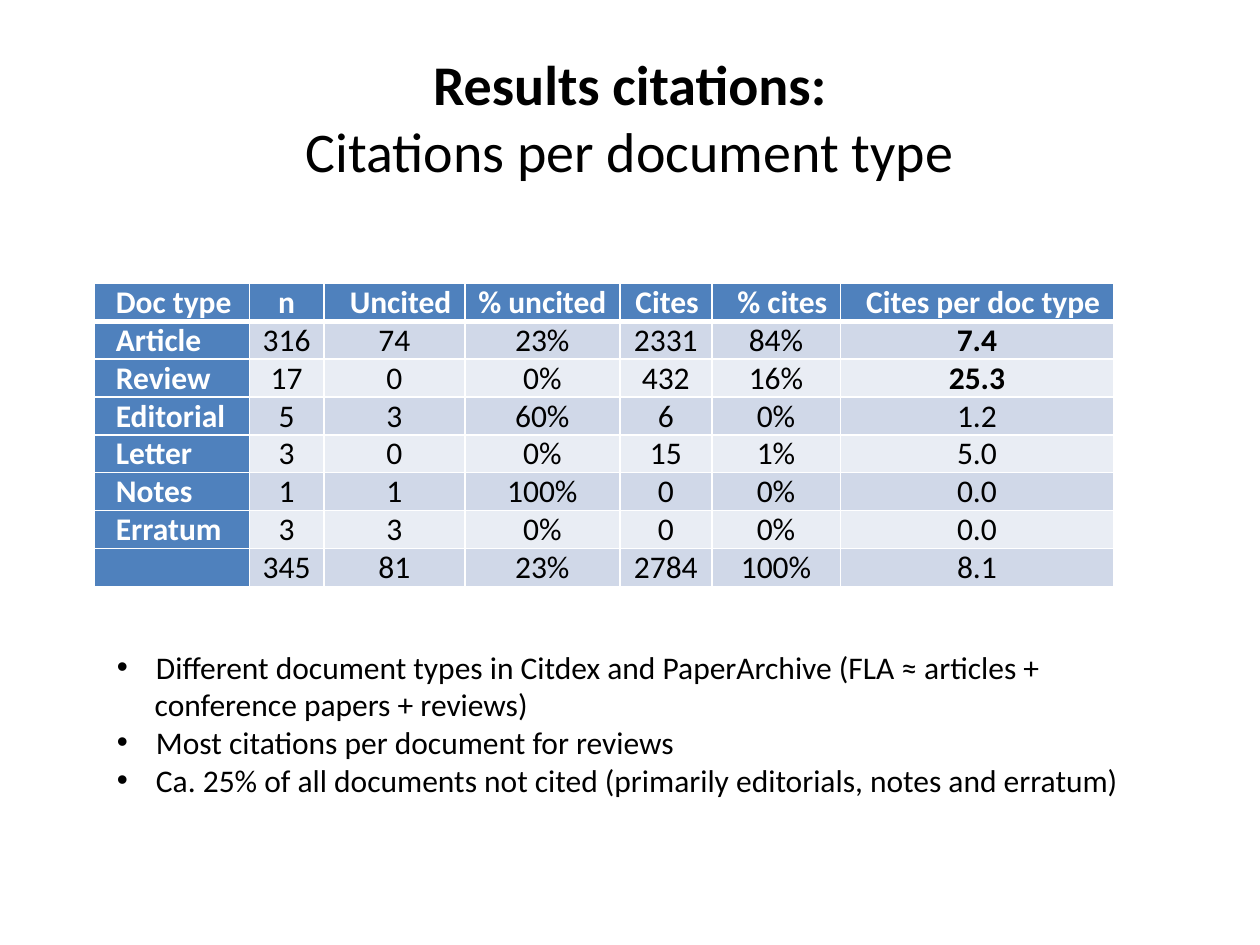
from lxml import etree
from pptx import Presentation
from pptx.dml.color import RGBColor
from pptx.enum.text import MSO_ANCHOR, PP_ALIGN
from pptx.oxml.ns import qn
from pptx.util import Inches, Pt

LEFT, CENTER = PP_ALIGN.LEFT, PP_ALIGN.CENTER
MIDDLE = MSO_ANCHOR.MIDDLE
BLUE, BAND_DARK, BAND_LIGHT = "4F81BD", "D0D8E8", "E9EDF4"
WHITE, BLACK = "FFFFFF", "000000"


def color(value):
    return RGBColor.from_string(value)


def style(paragraph, size, font_color, bold=False, align=LEFT, margin=0, indent=0):
    paragraph.alignment = align
    font = paragraph.font
    font.name, font.size, font.bold = "Calibri", Pt(size), bold
    font.color.rgb = color(font_color)
    properties = paragraph._p.get_or_add_pPr()
    properties.set("marL", str(Inches(margin)))
    properties.set("indent", str(Inches(indent)))


prs = Presentation()
prs.slide_width, prs.slide_height = Inches(10), Inches(7.5)
slide = prs.slides.add_slide(prs.slide_layouts[6])

# Title
title = slide.shapes.add_textbox(Inches(0.5), Inches(0.3), Inches(9), Inches(1.25)).text_frame
title.word_wrap = True
title.vertical_anchor = MIDDLE
heading = title.paragraphs[0]
style(heading, 32, BLACK, align=CENTER)
topic = heading.add_run()
topic.text = "Results citations:"
topic.font.bold = True
heading.add_line_break()
heading.add_run().text = "Citations per document type"

# Citation table
rows = [
    ["Doc type", "n", "Uncited", "% uncited", "Cites", "% cites", "Cites per doc type"],
    ["Article", "316", "74", "23%", "2331", "84%", "7.4"],
    ["Review", "17", "0", "0%", "432", "16%", "25.3"],
    ["Editorial", "5", "3", "60%", "6", "0%", "1.2"],
    ["Letter", "3", "0", "0%", "15", "1%", "5.0"],
    ["Notes", "1", "1", "100%", "0", "0%", "0.0"],
    ["Erratum", "3", "3", "0%", "0", "0%", "0.0"],
    ["", "345", "81", "23%", "2784", "100%", "8.1"],
]
widths = [1.23, 0.59, 1.12, 1.23, 0.73, 1.02, 2.17]
header_indents = [0.1, 0, 0.1, -0.01, 0.02, 0.1, 0.1]
top_scores = ("7.4", "25.3")
table = slide.shapes.add_table(
    len(rows), len(widths), Inches(0.75), Inches(2.25), Inches(sum(widths)), Inches(2.4)
).table
for column, width in zip(table.columns, widths):
    column.width = Inches(width)

for r, row in enumerate(rows):
    for c, value in enumerate(row):
        cell = table.cell(r, c)
        is_label = r == 0 or c == 0
        cell.text = value
        cell.vertical_anchor = MIDDLE
        cell.margin_left = cell.margin_right = Inches(0.07)
        cell.margin_top = cell.margin_bottom = 0
        style(
            cell.text_frame.paragraphs[0], 18, WHITE if is_label else BLACK,
            bold=is_label or value in top_scores,
            align=LEFT if c == 0 else CENTER,
            indent=header_indents[c] if is_label else 0,
        )
        if not value:
            cell.text_frame.paragraphs[0]._p.get_or_add_endParaRPr().set("sz", "1800")

        # White grid lines, heavier under the header; borders precede the fill
        cell_properties = cell._tc.get_or_add_tcPr()
        for side in ("L", "R", "T", "B"):
            heavy = (r, side) in ((0, "B"), (1, "T"))
            line = etree.SubElement(cell_properties, qn(f"a:ln{side}"), w=str(Pt(3 if heavy else 1)))
            line_fill = etree.SubElement(line, qn("a:solidFill"))
            etree.SubElement(line_fill, qn("a:srgbClr"), val=WHITE)
        cell.fill.solid()
        band = BAND_DARK if r % 2 else BAND_LIGHT
        cell.fill.fore_color.rgb = color(BLUE if is_label else band)

# Findings
findings = [
    ("Different document types in Citdex and PaperArchive (FLA ≈ articles +", True),
    ("conference papers + reviews)", False),
    ("Most citations per document for reviews", True),
    ("Ca. 25% of all documents not cited (primarily editorials, notes and erratum)", True),
]
notes = slide.shapes.add_textbox(Inches(0.83), Inches(5.09), Inches(8.26), Inches(1.62)).text_frame
notes.word_wrap = True
for i, (finding, has_bullet) in enumerate(findings):
    paragraph = notes.add_paragraph() if i else notes.paragraphs[0]
    paragraph.text = finding
    if has_bullet:
        style(paragraph, 18, BLACK, margin=0.31, indent=-0.31)
        properties = paragraph._p.get_or_add_pPr()
        bullet_font = etree.Element(qn("a:buFont"), typeface="Arial")
        bullet = etree.Element(qn("a:buChar"), char="•")
        properties.insert(0, bullet_font)
        properties.insert(1, bullet)
    else:
        style(paragraph, 18, BLACK, indent=0.3)

prs.save("out.pptx")
